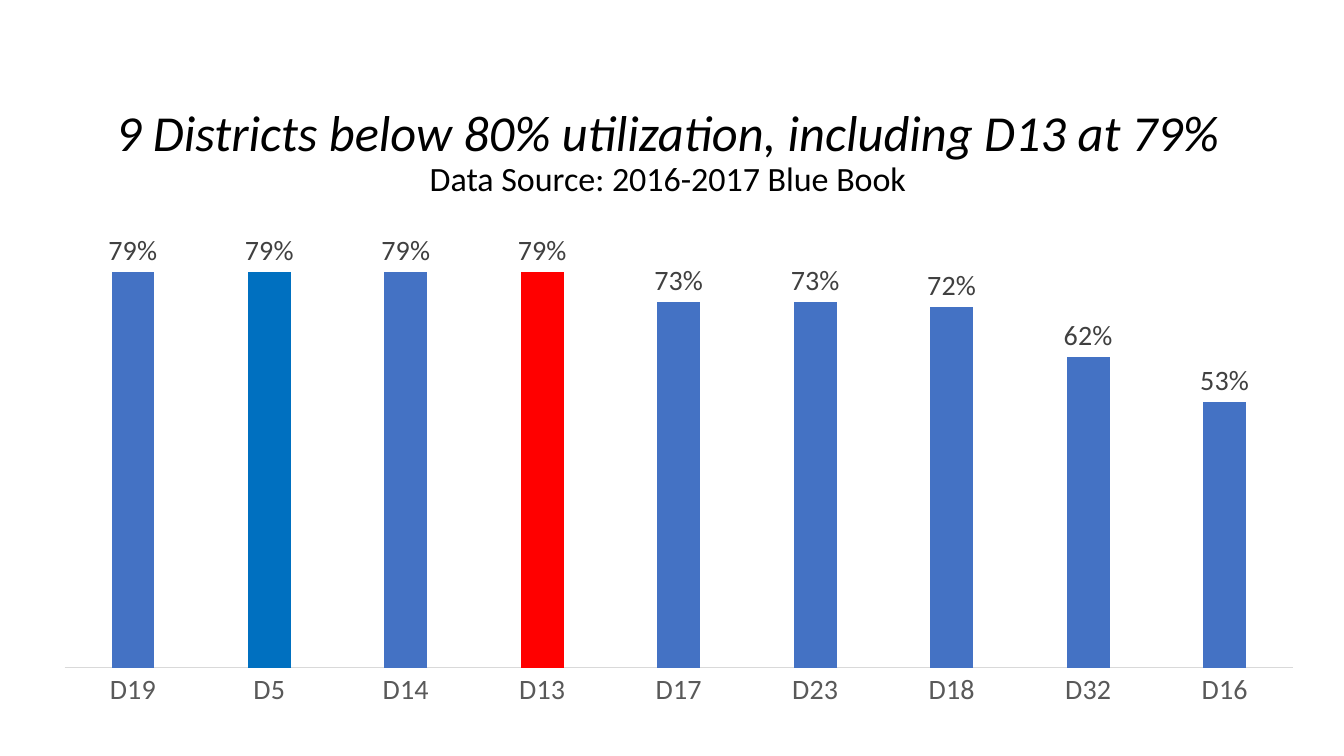
import pptx
import pptx.chart.data
import pptx.dml.color
import pptx.enum.chart
import pptx.enum.text
import pptx.oxml
import pptx.oxml.ns
import pptx.util

Inches = pptx.util.Inches
Pt = pptx.util.Pt
RGBColor = pptx.dml.color.RGBColor

BLACK = RGBColor(0x00, 0x00, 0x00)
BAR_BLUE = RGBColor(0x44, 0x72, 0xC4)
D5_BLUE = RGBColor(0x00, 0x70, 0xC0)
D13_RED = RGBColor(0xFF, 0x00, 0x00)
LABEL_GRAY = RGBColor(0x40, 0x40, 0x40)
AXIS_TEXT_GRAY = RGBColor(0x59, 0x59, 0x59)
AXIS_LINE_GRAY = RGBColor(0xD9, 0xD9, 0xD9)

UTILIZATION = {
    "D19": 0.79, "D5": 0.79, "D14": 0.79, "D13": 0.79, "D17": 0.73,
    "D23": 0.73, "D18": 0.72, "D32": 0.62, "D16": 0.53,
}
HIGHLIGHTS = {"D5": D5_BLUE, "D13": D13_RED}


class SlideBuilder:
    """Holds the style and the current slide."""

    font_name = "Calibri"

    def __init__(self, slide):
        self.slide = slide

    def format_font(self, font, size, color):
        font.name = self.font_name
        font.size = Pt(size)
        font.color.rgb = color

    def add_text_box(self, left, top, width, height, top_margin, right_margin):
        shape = self.slide.shapes.add_textbox(
            Inches(left), Inches(top), Inches(width), Inches(height))
        frame = shape.text_frame
        frame.word_wrap = True
        frame.vertical_anchor = pptx.enum.text.MSO_ANCHOR.TOP
        frame.margin_top = Inches(top_margin)
        frame.margin_right = Inches(right_margin)
        frame.margin_bottom = 0
        return frame

    def add_text(self, paragraph, text, size=18, color=BLACK, italic=False):
        paragraph.alignment = pptx.enum.text.PP_ALIGN.CENTER
        paragraph.line_spacing = 0.9
        run = paragraph.add_run()
        run.text = text
        run.font.italic = italic
        self.format_font(run.font, size, color)

    def add_column_chart(self, left, top, width, height, values, highlights):
        data = pptx.chart.data.CategoryChartData(number_format="0%")
        data.categories = list(values)
        data.add_series("Series 1", list(values.values()))
        chart = self.slide.shapes.add_chart(
            pptx.enum.chart.XL_CHART_TYPE.COLUMN_CLUSTERED,
            Inches(left), Inches(top), Inches(width), Inches(height), data).chart
        chart.has_legend = False
        chart.has_title = False
        self.format_font(chart.font, 10, BLACK)

        # Columns, with some districts picked out
        plot = chart.plots[0]
        plot.vary_by_categories = False
        plot.gap_width = 219
        plot.overlap = -27
        series = plot.series[0]
        series.format.fill.solid()
        series.format.fill.fore_color.rgb = BAR_BLUE
        for index, district in enumerate(values):
            if district in highlights:
                fill = series.points[index].format.fill
                fill.solid()
                fill.fore_color.rgb = highlights[district]

        # Data labels
        labels = series.data_labels
        labels.show_value = True
        labels.number_format = "0%"
        labels.number_format_is_linked = False
        labels.position = pptx.enum.chart.XL_LABEL_POSITION.OUTSIDE_END
        self.format_font(labels.font, 20, LABEL_GRAY)

        # Axes
        category_axis = chart.category_axis
        category_axis.major_tick_mark = pptx.enum.chart.XL_TICK_MARK.NONE
        category_axis.format.line.color.rgb = AXIS_LINE_GRAY
        category_axis.format.line.width = Pt(0.75)
        self.format_font(category_axis.tick_labels.font, 20, AXIS_TEXT_GRAY)
        value_axis = chart.value_axis
        value_axis.minimum_scale = 0
        value_axis.maximum_scale = 0.9
        value_axis.has_major_gridlines = False
        value_axis.visible = False
        return chart

    def place_plot(self, chart, x, y, w, h):
        position = "".join(
            f'<c:{name} val="{value}"/>' for name, value in (
                ("layoutTarget", "inner"), ("xMode", "edge"), ("yMode", "edge"),
                ("x", x), ("y", y), ("w", w), ("h", h)))
        layout = pptx.oxml.parse_xml(
            f'<c:layout {pptx.oxml.ns.nsdecls("c")}>'
            f'<c:manualLayout>{position}</c:manualLayout></c:layout>')
        plot_area = chart.element.chart.plotArea
        for old_layout in plot_area.findall(pptx.oxml.ns.qn("c:layout")):
            plot_area.remove(old_layout)
        plot_area.insert(0, layout)


def main():
    presentation = pptx.Presentation()
    presentation.slide_width = Inches(13.33)
    presentation.slide_height = Inches(7.5)
    builder = SlideBuilder(
        presentation.slides.add_slide(presentation.slide_layouts[6]))

    # Heading and data source
    heading = builder.add_text_box(
        0.1, 0.51, 13.12, 1.45, top_margin=0.56, right_margin=0.17)
    builder.add_text(heading.paragraphs[0],
                     "9 Districts below 80% utilization, including D13 at 79%",
                     size=36, italic=True)
    builder.add_text(heading.add_paragraph(),
                     "Data Source: 2016-2017 Blue Book", size=24.3)

    # Utilization by district
    chart = builder.add_column_chart(
        0.39, 1.99, 12.56, 5.27, UTILIZATION, HIGHLIGHTS)
    builder.place_plot(chart, 0.02, 0.03, 0.97, 0.85)

    presentation.save("out.pptx")


if __name__ == "__main__":
    main()
